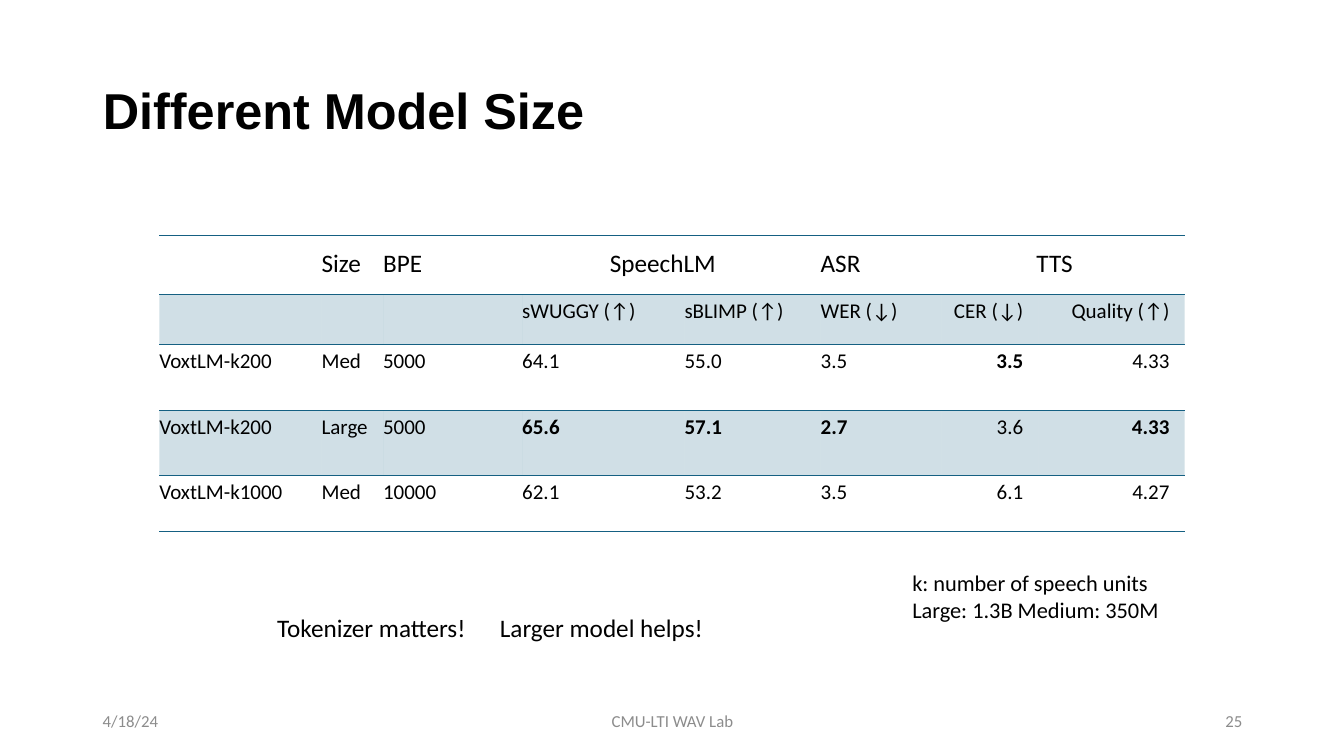
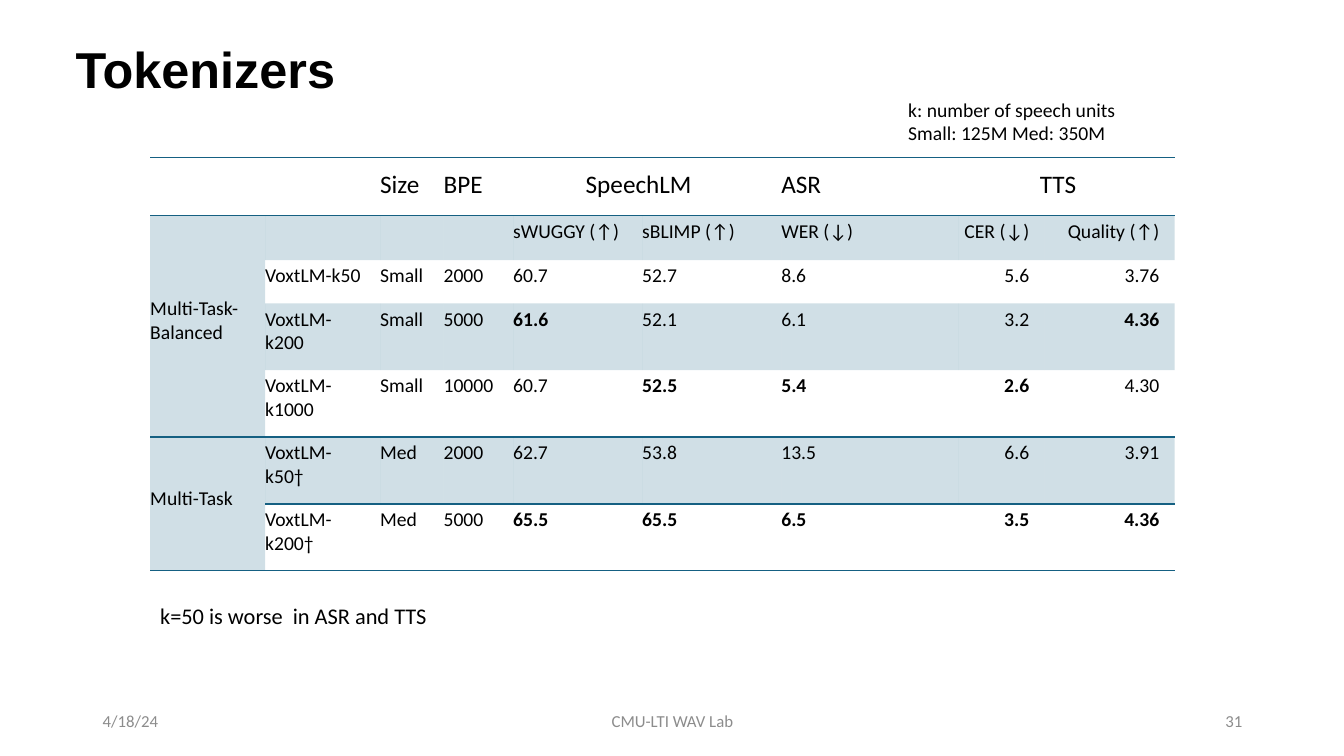
from dataclasses import dataclass
from lxml.etree import SubElement
from pptx import Presentation
from pptx.dml.color import RGBColor as RGB
from pptx.enum.text import MSO_ANCHOR as ANCHOR, MSO_AUTO_SIZE as AUTO, PP_ALIGN as ALIGN
from pptx.oxml.ns import qn
from pptx.util import Inches, Pt


@dataclass(frozen=True)
class Theme:
    ink: str = "000000"
    muted: str = "8C8C8C"
    accent: str = "156082"
    tint: int = 20000
    head_font: str = "Arial"
    body_font: str = "Calibri"
    title: int = 36
    header: int = 18
    footer: int = 12
    rule: int = 1
    no_grid: str = "{2D5ABB26-0587-4C30-8999-92F81FD0307C}"


T = Theme()


def write(tf, text, size=T.header, color=T.ink, font=T.body_font, bold=False,
          align=ALIGN.LEFT, spacing=None, tab=None):
    for i, line in enumerate(text.split("\n")):
        p = tf.add_paragraph() if i else tf.paragraphs[0]
        p.alignment = align
        if spacing:
            p.line_spacing = spacing
        if tab:
            tabs = SubElement(p._p.get_or_add_pPr(), qn("a:tabLst"))
            SubElement(tabs, qn("a:tab"), pos=str(Inches(tab)), algn="l")
        r = p.add_run()
        r.text = line
        r.font.size = Pt(size)
        r.font.name = font
        r.font.bold = bold
        r.font.color.rgb = RGB.from_string(color)


def border(cell, side):
    ln = SubElement(cell._tc.get_or_add_tcPr(), qn(f"a:{side}"), w=str(Pt(T.rule)))
    fill = SubElement(ln, qn("a:solidFill"))
    SubElement(fill, qn("a:srgbClr"), val=T.accent)


SLIDES = [
    dict(
        title="Different Model Size", title_at=(0.92, 0.5), number="25",
        table_at=(1.58, 2.34), size=15,
        cols=[1.61, 0.61, 1.38, 1.61, 1.35, 1.2, 0.96, 1.45],
        heights=[0.58, 0.5, 0.65, 0.65, 0.55],
        rows=[
            ["", "Size", "BPE", "SpeechLM", "", "ASR", "TTS", ""],
            ["", "", "", "sWUGGY (↑)", "sBLIMP (↑)", "WER (↓)", "CER (↓)", "Quality (↑)"],
            ["VoxtLM-k200", "Med", "5000", "64.1", "55.0", "3.5", "*3.5", "4.33"],
            ["VoxtLM-k200", "Large", "5000", "*65.6", "*57.1", "*2.7", "3.6", "*4.33"],
            ["VoxtLM-k1000", "Med", "10000", "62.1", "53.2", "3.5", "6.1", "4.27"],
        ],
        groups=[], ruled={0, 1, 2, 3, 4},
        notes=[
            (2.65, 6.03, 6.17, 0.4, "Tokenizer matters!\tLarger model helps!", 18, 2.21),
            (8.95, 5.6, 3, 0.64, "k: number of speech units\nLarge: 1.3B Medium: 350M", 16, None),
        ],
    ),
    dict(
        title="Tokenizers", title_at=(0.65, 0.1), number="31",
        table_at=(1.49, 1.56), size=14,
        cols=[1.14, 1.14, 0.63, 0.69, 1.28, 1.38, 1.76, 0.85, 1.29],
        heights=[0.58, 0.44, 0.43] + [0.66] * 4,
        rows=[
            ["", "", "Size", "BPE", "SpeechLM", "", "ASR", "TTS", ""],
            ["Multi-Task-Balanced", "", "", "", "sWUGGY (↑)", "sBLIMP (↑)", "WER (↓)",
             "CER (↓)", "Quality (↑)"],
            ["", "VoxtLM-k50", "Small", "2000", "60.7", "52.7", "8.6", "5.6", "3.76"],
            ["", "VoxtLM-k200", "Small", "5000", "*61.6", "52.1", "6.1", "3.2", "*4.36"],
            ["", "VoxtLM-k1000", "Small", "10000", "60.7", "*52.5", "*5.4", "*2.6", "4.30"],
            ["Multi-Task", "VoxtLM-k50†", "Med", "2000", "62.7", "53.8", "13.5", "6.6", "3.91"],
            ["", "VoxtLM-k200†", "Med", "5000", "*65.5", "*65.5", "*6.5", "*3.5", "*4.36"],
        ],
        groups=[(1, 4), (5, 6)], ruled={0, 4, 5, 6},
        notes=[
            (1.49, 5.92, 6.17, 0.37, "k=50 is worse  in ASR and TTS", 16, None),
            (8.91, 0.92, 3.03, 0.57, "k: number of speech units\nSmall: 125M Med: 350M", 14, None),
        ],
    ),
]

prs = Presentation()
prs.slide_width, prs.slide_height = Inches(13.33), Inches(7.5)

for d in SLIDES:
    s = prs.slides.add_slide(prs.slide_layouts[5])

    title = s.shapes.title
    title.left, title.top = map(Inches, d["title_at"])
    title.width, title.height = Inches(10.7), Inches(0.94)
    tf = title.text_frame
    tf.auto_size, tf.vertical_anchor = AUTO.NONE, ANCHOR.BOTTOM
    write(tf, d["title"], size=T.title, font=T.head_font, bold=True, spacing=0.9)

    n_rows, n_cols = len(d["rows"]), len(d["cols"])
    left, top = d["table_at"]
    frame = s.shapes.add_table(n_rows, n_cols, Inches(left), Inches(top),
                               Inches(sum(d["cols"])), Inches(sum(d["heights"])))
    table = frame.table
    table.first_row = table.horz_banding = False
    table._tbl.tblPr.find(qn("a:tableStyleId")).text = T.no_grid
    for column, width in zip(table.columns, d["cols"]):
        column.width = Inches(width)
    for row, height in zip(table.rows, d["heights"]):
        row.height = Inches(height)
    for c in (n_cols - 5, n_cols - 2):
        table.cell(0, c).merge(table.cell(0, c + 1))
    for first, last in d["groups"]:
        table.cell(first, 0).merge(table.cell(last, 0))

    for i, row in enumerate(d["rows"]):
        for j, text in enumerate(row):
            cell = table.cell(i, j)
            grouped = bool(d["groups"]) and j == 0 and i > 0
            if text:
                cell.margin_left, cell.margin_top = 0, Inches(0.04 if i else 0.03)
                cell.margin_right, cell.margin_bottom = Inches(0.15 if i else 0.17), Inches(0.15)
                cell.vertical_anchor = (ANCHOR.BOTTOM if i == 0 else
                                        ANCHOR.MIDDLE if grouped else ANCHOR.TOP)
                align = (ALIGN.CENTER if cell.span_width > 1 else
                         ALIGN.RIGHT if i and j >= n_cols - 2 else ALIGN.LEFT)
                write(cell.text_frame, text.lstrip("*"), size=d["size"] if i else T.header,
                      bold=text.startswith("*"), align=align)
            if i == 0:
                border(cell, "lnT")
            if i + cell.span_height - 1 in d["ruled"] and not (cell.is_spanned and grouped and i == 5):
                border(cell, "lnB")
            if i % 2 or grouped:
                cell.fill.solid()
                cell.fill.fore_color.rgb = RGB.from_string(T.accent)
                color = cell._tc.tcPr.find(f"{qn('a:solidFill')}/{qn('a:srgbClr')}")
                SubElement(color, qn("a:alpha"), val=str(T.tint))
            else:
                cell.fill.background()

    for x, y, w, h, text, size, tab in d["notes"]:
        tf = s.shapes.add_textbox(Inches(x), Inches(y), Inches(w), Inches(h)).text_frame
        tf.word_wrap = True
        write(tf, text, size=size, tab=tab)

    for x, w, text, align in [(0.92, 3, "4/18/24", ALIGN.LEFT),
                              (4.42, 4.5, "CMU-LTI WAV Lab", ALIGN.CENTER),
                              (9.42, 3, d["number"], ALIGN.RIGHT)]:
        tf = s.shapes.add_textbox(Inches(x), Inches(6.95), Inches(w), Inches(0.4)).text_frame
        tf.word_wrap, tf.vertical_anchor = True, ANCHOR.MIDDLE
        write(tf, text, size=T.footer, color=T.muted, align=align)

prs.save("out.pptx")
